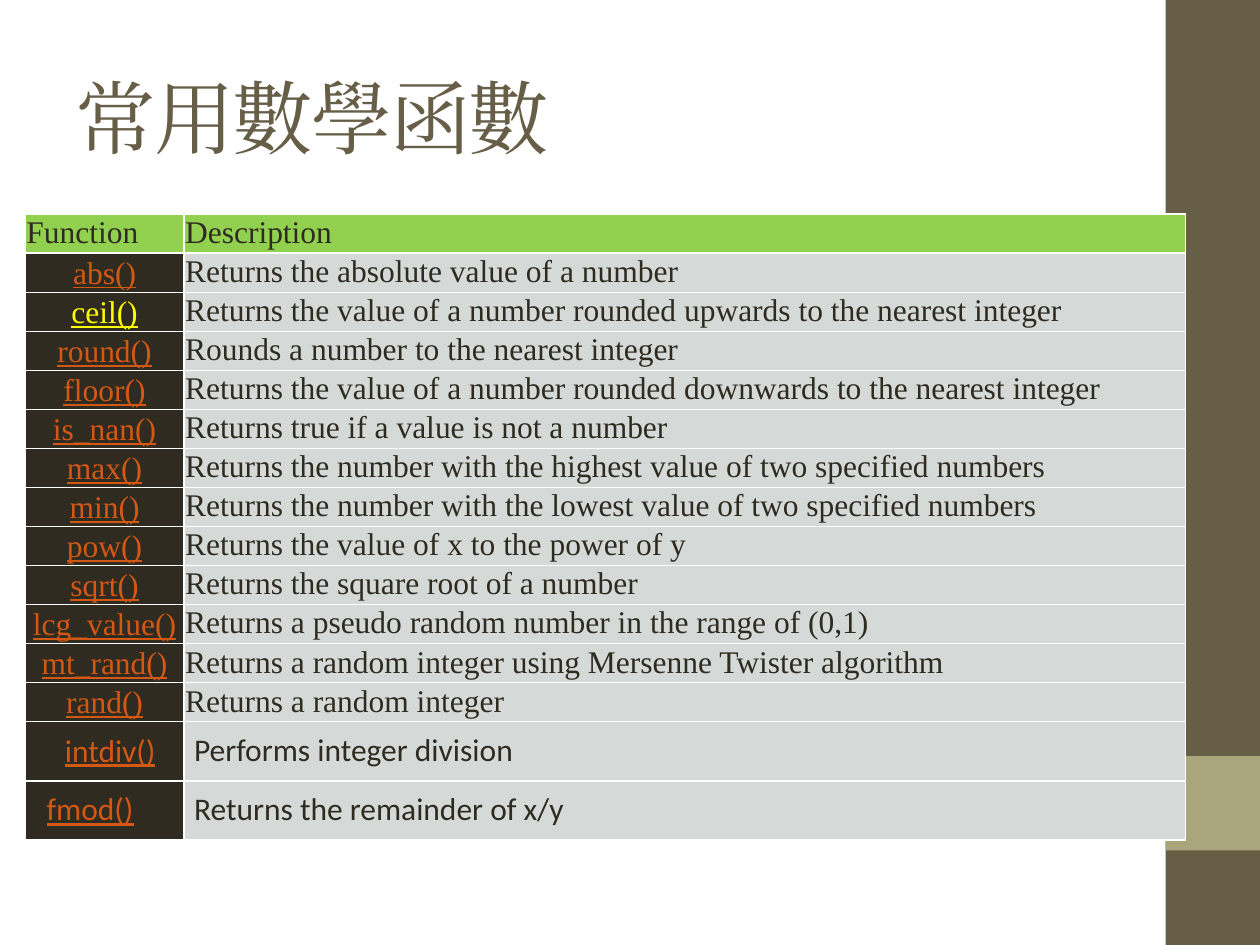
from lxml import etree
from pptx import Presentation
from pptx.dml.color import RGBColor
from pptx.enum.shapes import MSO_SHAPE
from pptx.enum.text import MSO_ANCHOR, PP_ALIGN
from pptx.oxml import parse_xml
from pptx.oxml.ns import nsdecls
from pptx.util import Inches, Pt

COLORS = {
    "brown": "675E47",
    "olive": "A9A57C",
    "dark": "2F2B20",
    "green": "92D050",
    "gray": "D5DAD8",
    "link": "D25814",
    "highlight": "FFFF00",
    "border": "FFFFFF",
}

FUNCTIONS = [
    ("abs()", "Returns the absolute value of a number"),
    ("ceil()", "Returns the value of a number rounded upwards to the nearest integer"),
    ("round()", "Rounds a number to the nearest integer"),
    ("floor()", "Returns the value of a number rounded downwards to the nearest integer"),
    ("is_nan()", "Returns true if a value is not a number"),
    ("max()", "Returns the number with the highest value of two specified numbers"),
    ("min()", "Returns the number with the lowest value of two specified numbers"),
    ("pow()", "Returns the value of x to the power of y"),
    ("sqrt()", "Returns the square root of a number"),
    ("lcg_value()", "Returns a pseudo random number in the range of (0,1)"),
    ("mt_rand()", "Returns a random integer using Mersenne Twister algorithm"),
    ("rand()", "Returns a random integer"),
    ("intdiv()", "Performs integer division"),
    ("fmod()", "Returns the remainder of x/y"),
]
SPACIOUS = ("intdiv()", "fmod()")
TIGHT_MARGINS = (0.01, 0.01, 0.01, 0)


def rgb(name):
    return RGBColor.from_string(COLORS[name])


def add_band(slide, top, height, color):
    band = slide.shapes.add_shape(
        MSO_SHAPE.RECTANGLE, Inches(9.25), Inches(top), Inches(0.75), Inches(height))
    band.shadow.inherit = False
    band.fill.solid()
    band.fill.fore_color.rgb = rgb(color)
    band.line.fill.background()


def add_title(slide, wording):
    title = slide.shapes.add_textbox(Inches(0.5), Inches(0.3), Inches(8.33), Inches(1.25))
    frame = title.text_frame
    frame.word_wrap = True
    frame.vertical_anchor = MSO_ANCHOR.MIDDLE
    frame.text = wording
    run = frame.paragraphs[0].runs[0]
    run.font.size = Pt(46)
    run.font.name = "Cambria"
    run.font.color.rgb = rgb("brown")
    properties = run.font._element
    properties.set("spc", "-100")
    east_asian = parse_xml(f'<a:ea {nsdecls("a")} typeface="Cambria"/>')
    properties.find("{*}latin").addnext(east_asian)


def add_borders(cell):
    """Draw a thin line on all four sides; lines must precede the cell fill."""
    properties = cell._tc.get_or_add_tcPr()
    for position, side in enumerate(("lnL", "lnR", "lnT", "lnB")):
        line = parse_xml(
            f'<a:{side} {nsdecls("a")} w="{Pt(1)}"><a:solidFill>'
            f'<a:srgbClr val="{COLORS["border"]}"/></a:solidFill></a:{side}>')
        properties.insert(position, line)


def fill_cell(cell, wording, fill, color="dark", font="Times New Roman",
              margins=TIGHT_MARGINS, centered=False, middle=False, underline=False):
    cell.text = wording
    cell.fill.solid()
    cell.fill.fore_color.rgb = rgb(fill)
    add_borders(cell)
    cell.margin_left, cell.margin_right, cell.margin_top, cell.margin_bottom = map(Inches, margins)
    cell.vertical_anchor = MSO_ANCHOR.MIDDLE if middle else MSO_ANCHOR.TOP
    paragraph = cell.text_frame.paragraphs[0]
    paragraph.alignment = PP_ALIGN.CENTER if centered else PP_ALIGN.LEFT
    run_font = paragraph.runs[0].font
    run_font.size = Pt(18)
    run_font.name = font
    run_font.bold = False
    run_font.underline = underline
    run_font.color.rgb = rgb(color)


def add_function_table(slide):
    table = slide.shapes.add_table(
        len(FUNCTIONS) + 1, 2, Inches(0.2), Inches(1.7), Inches(9.21), Inches(4.97)).table
    table.columns[0].width = Inches(1.26)
    table.columns[1].width = Inches(7.95)
    table.rows[0].height = Inches(0.31)
    for column, heading in enumerate(("Function", "Description")):
        fill_cell(table.cell(0, column), heading, "green")

    for row, (function, description) in enumerate(FUNCTIONS, start=1):
        spacious = function in SPACIOUS
        last = row == len(FUNCTIONS)
        table.rows[row].height = Inches(0.47 if spacious else 0.31)
        font = "Calibri" if spacious else "Times New Roman"
        fill_cell(table.cell(row, 0), function, "dark",
                  color="highlight" if function == "ceil()" else "link", font=font,
                  margins=(0.17, 0.08, 0.08, 0.08) if spacious else TIGHT_MARGINS,
                  centered=not last, middle=not last, underline=True)
        fill_cell(table.cell(row, 1), description, "gray", font=font,
                  margins=(0.08,) * 4 if spacious else TIGHT_MARGINS)


def main():
    presentation = Presentation()
    presentation.slide_width = Inches(10)
    presentation.slide_height = Inches(7.5)
    slide = presentation.slides.add_slide(presentation.slide_layouts[6])
    add_band(slide, 0, 7.5, "brown")
    add_band(slide, 6, 0.75, "olive")
    add_function_table(slide)
    add_title(slide, "常用數學函數")
    presentation.save("out.pptx")


if __name__ == "__main__":
    main()
